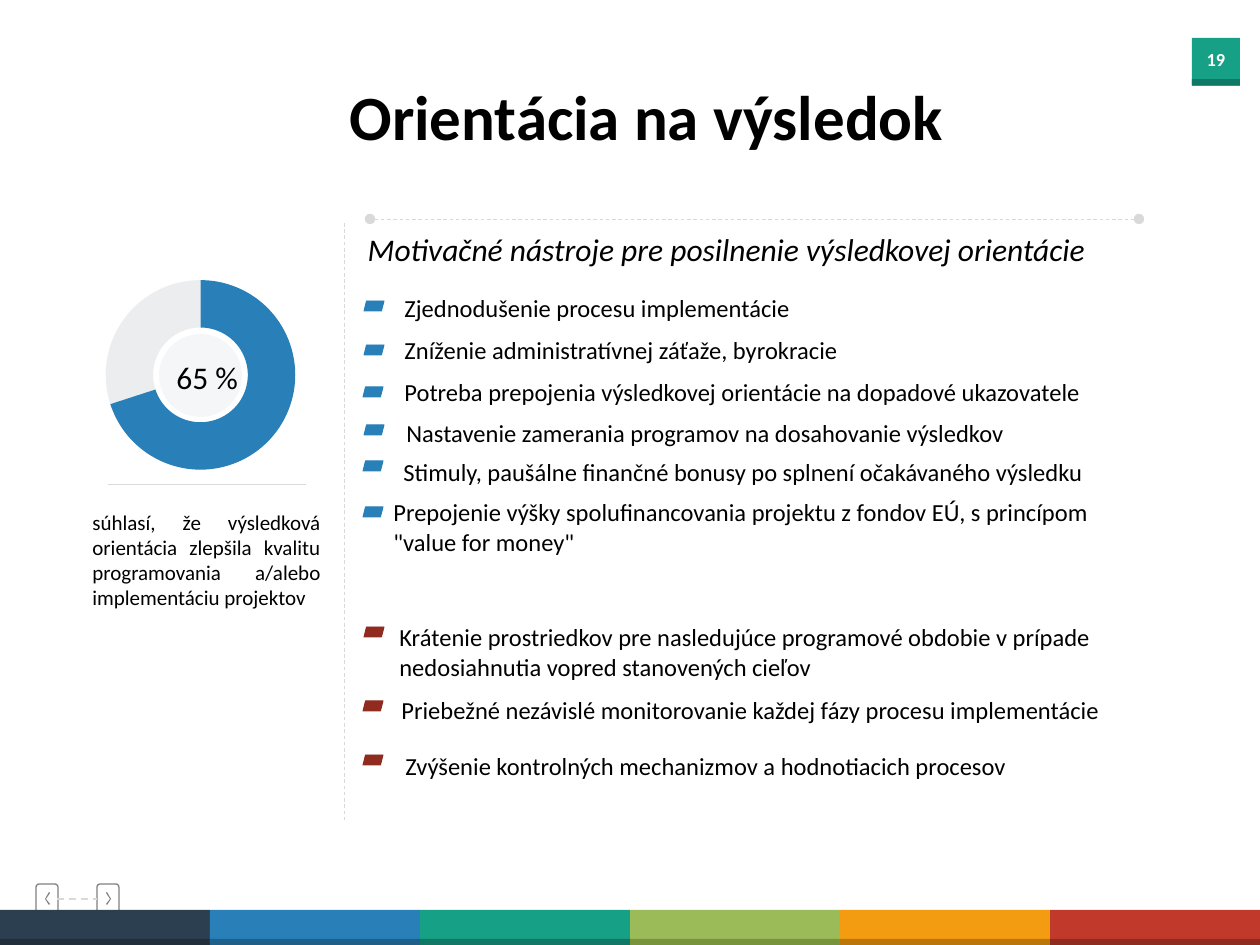
import pptx
import pptx.chart.data
import pptx.dml.color
import pptx.enum.chart
import pptx.enum.dml
import pptx.enum.shapes
import pptx.enum.text
import pptx.oxml
import pptx.oxml.ns
import pptx.util

RGB = pptx.dml.color.RGBColor
SHAPE = pptx.enum.shapes.MSO_SHAPE
ALIGN = pptx.enum.text.PP_ALIGN

PX = 914400 / 126
FONT = "Calibri"

BLACK = RGB(0x00, 0x00, 0x00)
WHITE = RGB(0xFF, 0xFF, 0xFF)
RULE_GREY = RGB(0xD9, 0xD9, 0xD9)
ICON_GREY = RGB(0x80, 0x80, 0x80)
SLATE = RGB(0x44, 0x54, 0x6A)
BLUE = RGB(0x29, 0x80, 0xB9)
TEAL = RGB(0x16, 0xA0, 0x85)
DARK_TEAL = RGB(0x10, 0x78, 0x64)
DARK_RED = RGB(0x90, 0x2B, 0x20)

# Footer stripes: main colour and its darker edge
STRIPES = [
    (RGB(0x2C, 0x3F, 0x50), RGB(0x21, 0x2F, 0x3C)),
    (BLUE, RGB(0x1F, 0x60, 0x8B)),
    (TEAL, DARK_TEAL),
    (RGB(0x9B, 0xBB, 0x59), RGB(0x77, 0x93, 0x3C)),
    (RGB(0xF3, 0x9C, 0x12), RGB(0xBA, 0x76, 0x09)),
    (RGB(0xC0, 0x39, 0x2B), DARK_RED),
]

# Text left and top, marker left and top, marker colour, wording
MEASURES = [
    (392, 287, 364, 301, BLUE, "Zjednodušenie procesu implementácie"),
    (392, 329, 364, 345, BLUE, "Zníženie administratívnej záťaže, byrokracie"),
    (392, 371, 363, 387, BLUE,
     "Potreba prepojenia výsledkovej orientácie na dopadové ukazovatele"),
    (394, 412, 364, 425, BLUE,
     "Nastavenie zamerania programov na dosahovanie výsledkov"),
    (391, 451, 363, 461, BLUE,
     "Stimuly, paušálne finančné bonusy po splnení očakávaného výsledku"),
    (381, 491, 363, 507, BLUE,
     "Prepojenie výšky spolufinancovania projektu z fondov EÚ, "
     "s princípom \"value for money\""),
    (387, 616, 364, 627, DARK_RED,
     "Krátenie prostriedkov pre nasledujúce programové obdobie v prípade "
     "nedosiahnutia vopred stanovených cieľov"),
    (389, 689, 363, 701, DARK_RED,
     "Priebežné nezávislé monitorovanie každej fázy procesu implementácie"),
    (393, 745, 363, 755, DARK_RED,
     "Zvýšenie kontrolných mechanizmov a hodnotiacich procesov"),
]


def px(*lengths):
    return [round(length * PX) for length in lengths]


def set_alpha(element, percent):
    for colour in element.xpath(".//a:srgbClr"):
        alpha = colour.makeelement(pptx.oxml.ns.qn("a:alpha"), {"val": str(percent * 1000)})
        colour.append(alpha)


def set_text(shape, text, size=14, color=BLACK, bold=False, italic=False,
             align=ALIGN.LEFT, wrap=True):
    frame = shape.text_frame
    frame.word_wrap = wrap
    frame.auto_size = pptx.enum.text.MSO_AUTO_SIZE.SHAPE_TO_FIT_TEXT
    frame.vertical_anchor = pptx.enum.text.MSO_ANCHOR.TOP
    paragraph = frame.paragraphs[0]
    paragraph.alignment = align
    run = paragraph.add_run()
    run.text = text
    run.font.name = FONT
    run.font.size = pptx.util.Pt(size)
    run.font.bold = bold
    run.font.italic = italic
    run.font.color.rgb = color


def add_text(slide, box, text, **style):
    set_text(slide.shapes.add_textbox(*px(*box)), text, **style)


def paint(shape, fill=None, line=None, weight=0.5):
    shape.shadow.inherit = False
    if fill is None:
        shape.fill.background()
    else:
        shape.fill.solid()
        shape.fill.fore_color.rgb = fill
    if line is None:
        shape.line.fill.background()
    else:
        shape.line.color.rgb = line
        shape.line.width = pptx.util.Pt(weight)
    return shape


def add_block(slide, kind, box, **style):
    return paint(slide.shapes.add_shape(kind, *px(*box)), **style)


def add_rule(slide, ends, weight=0.5, dashed=True, dots=False):
    rule = slide.shapes.add_connector(
        pptx.enum.shapes.MSO_CONNECTOR.STRAIGHT, *px(*ends))
    rule.line.color.rgb = RULE_GREY
    rule.line.width = pptx.util.Pt(weight)
    if dashed:
        rule.line.dash_style = pptx.enum.dml.MSO_LINE.DASH
    properties = rule._element.spPr
    if dots:
        outline = properties.find(pptx.oxml.ns.qn("a:ln"))
        for end in ("a:headEnd", "a:tailEnd"):
            outline.append(outline.makeelement(pptx.oxml.ns.qn(end), {"type": "oval"}))
    properties.append(properties.makeelement(pptx.oxml.ns.qn("a:effectLst"), {}))


def add_nav_button(slide, left, tip, direction):
    frame = add_block(slide, SHAPE.ROUNDED_RECTANGLE, (left, 884, 22, 29),
                      line=ICON_GREY, weight=0.75)
    frame.adjustments[0] = 0.14
    outline = [(5, 893), (1, 899), (5, 904), (4, 905), (0, 899), (4, 892)]
    points = [(tip + direction * offset, y) for offset, y in outline]
    builder = slide.shapes.build_freeform(*points[0], scale=PX)
    builder.add_line_segments(points[1:], close=True)
    paint(builder.convert_to_shape(), fill=ICON_GREY)


def add_agreement_ring(slide):
    shares = pptx.chart.data.CategoryChartData()
    shares.categories = ["1", "2"]
    shares.add_series("Series 1", (70, 30))
    chart = slide.shapes.add_chart(
        pptx.enum.chart.XL_CHART_TYPE.DOUGHNUT, *px(82, 262, 237, 226), shares).chart
    chart.has_legend = False
    chart.has_title = False
    chart.font.name = FONT
    chart.font.size = pptx.util.Pt(10)
    chart.font.color.rgb = BLACK

    ring = chart.plots[0]
    ring.vary_by_categories = True
    ring._element.xpath("c:holeSize")[0].set("val", "84")
    series = ring.series[0]
    for index, color in enumerate((BLUE, SLATE)):
        part = series.points[index].format
        part.fill.solid()
        part.fill.fore_color.rgb = color
        part.line.fill.background()
    set_alpha(series._element.xpath('c:dPt[c:idx/@val="1"]')[0], 10)

    # Fixed plot area inside the chart frame
    area = chart._chartSpace.xpath("c:chart/c:plotArea")[0]
    for automatic in area.xpath("c:layout"):
        area.remove(automatic)
    area.insert(0, pptx.oxml.parse_xml(
        f'<c:layout {pptx.oxml.ns.nsdecls("c")}><c:manualLayout>'
        '<c:layoutTarget val="inner"/><c:xMode val="edge"/><c:yMode val="edge"/>'
        '<c:x val="0.1"/><c:y val="0.08"/><c:w val="0.8"/><c:h val="0.84"/>'
        '</c:manualLayout></c:layout>'))


def main():
    deck = pptx.Presentation()
    deck.slide_width, deck.slide_height = px(1260, 945)
    slide = deck.slides.add_slide(deck.slide_layouts[5])

    # Page number
    add_block(slide, SHAPE.RECTANGLE, (1192, 38, 48, 48), fill=TEAL)
    add_block(slide, SHAPE.RECTANGLE, (1192, 79, 48, 6), fill=DARK_TEAL)
    add_text(slide, (1192, 42, 48, 35), "19", size=10.5, color=WHITE, bold=True,
             align=ALIGN.CENTER, wrap=False)

    # Navigation
    add_nav_button(slide, 36, 45, 1)
    add_nav_button(slide, 97, 111, -1)
    add_rule(slide, (57, 899, 97, 899), weight=1)

    # Title and heading
    title = slide.shapes.title
    title.left, title.top, title.width, title.height = px(334, 71, 625, 89)
    set_text(title, "Orientácia na výsledok", size=36, bold=True,
             align=ALIGN.CENTER, wrap=False)
    add_rule(slide, (1139, 219, 370, 219), dots=True)
    add_text(slide, (353, 224, 747, 50),
             "Motivačné nástroje pre posilnenie výsledkovej orientácie",
             size=18, italic=True, align=ALIGN.CENTER, wrap=False)

    # Share of agreement
    add_agreement_ring(slide)
    center = add_block(slide, SHAPE.OVAL, (159, 334, 83, 83), fill=SLATE)
    set_alpha(center._element.spPr, 5)
    add_text(slide, (164, 352, 88, 50), "65 %", size=18, wrap=False)
    add_rule(slide, (108, 484, 306, 484), dashed=False)
    add_text(slide, (80, 503, 253, 115),
             "súhlasí, že výsledková orientácia zlepšila kvalitu programovania "
             "a/alebo implementáciu projektov", size=12, align=ALIGN.JUSTIFY)
    add_rule(slide, (344, 223, 344, 823))

    # Measures with their markers
    for left, top, marker_left, marker_top, color, wording in MEASURES:
        add_text(slide, (left, top, 750, 42), wording)
        add_block(slide, SHAPE.PARALLELOGRAM, (marker_left, marker_top, 20, 10),
                  fill=color, line=color)

    # Footer stripes
    width = 1260 // len(STRIPES)
    for index, (color, edge) in enumerate(STRIPES):
        add_block(slide, SHAPE.RECTANGLE, (index * width, 910, width, 33), fill=color)
        add_block(slide, SHAPE.RECTANGLE, (index * width, 939, width, 6), fill=edge)

    deck.save("out.pptx")


if __name__ == "__main__":
    main()
